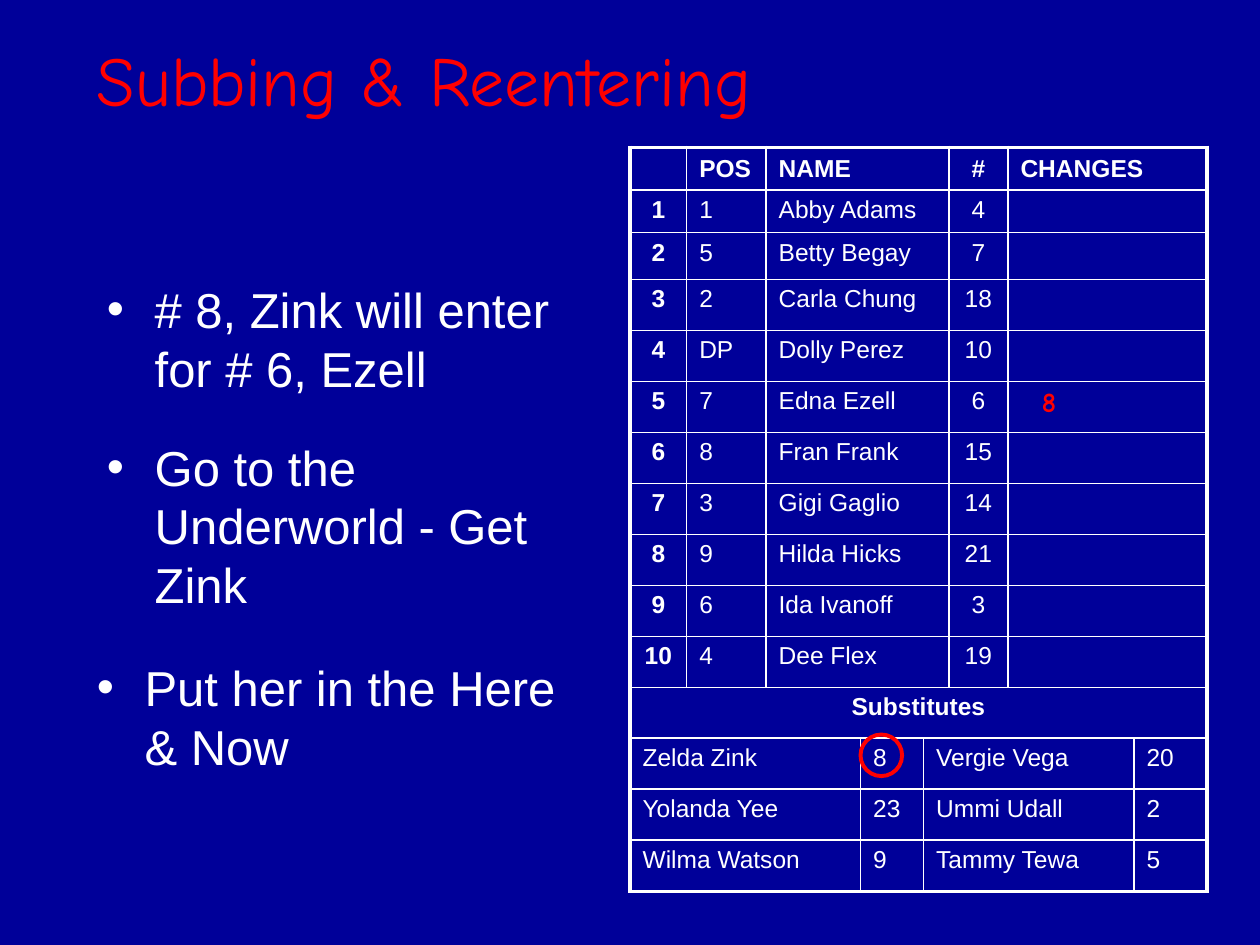
from lxml.etree import SubElement
from pptx import Presentation
from pptx.dml.color import RGBColor
from pptx.enum.shapes import MSO_SHAPE as Shape
from pptx.enum.text import MSO_ANCHOR as Anchor, PP_ALIGN as Align
from pptx.oxml.ns import qn
from pptx.util import Inches, Pt

COLORS = {"background": "000099", "text": "FFFFFF", "accent": "FF0000"}
BODY_FONT, TITLE_FONT = "Arial", "Comic Neue"
TABLE_TEXT_SIZE = 14
INNER_LINE, OUTER_LINE = 1, 2.25

COLUMN_WIDTHS = [0.45, 0.63, 0.75, 0.5, 0.2, 0.47, 1, 0.58]
TABLE_HEIGHT = 5.89
TOP_ROW_HEIGHTS = [0.32, 0.34, 0.37]
# First column and number of columns of each cell
LINEUP_SPANS = [(0, 1), (1, 1), (2, 3), (5, 1), (6, 2)]
SUBSTITUTE_SPANS = [(0, 3), (3, 1), (4, 3), (7, 1)]

HEADER = ["", "POS", "NAME", "#", "CHANGES"]
LINEUP = [
    ("1", "Abby Adams", "4"),
    ("5", "Betty Begay", "7"),
    ("2", "Carla Chung", "18"),
    ("DP", "Dolly Perez", "10"),
    ("7", "Edna Ezell", "6"),
    ("8", "Fran Frank", "15"),
    ("3", "Gigi Gaglio", "14"),
    ("9", "Hilda Hicks", "21"),
    ("6", "Ida Ivanoff", "3"),
    ("4", "Dee Flex", "19"),
]
SUBSTITUTES = [
    ("Zelda Zink", "8", "Vergie Vega", "20"),
    ("Yolanda Yee", "23", "Ummi Udall", "2"),
    ("Wilma Watson", "9", "Tammy Tewa", "5"),
]
STEPS = [
    ("# 8, Zink will enter for # 6, Ezell", (0.75, 2.17, 4.17, 1.5)),
    ("Put her in the Here & Now", (0.67, 5.17, 4.17, 1.08)),
    ("Go to the Underworld - Get Zink", (0.75, 3.42, 4.17, 1.5)),
]


def color(name):
    return RGBColor.from_string(COLORS[name])


def write(paragraph, text, color_name="text", **font_values):
    run = paragraph.add_run()
    run.text = text
    for name, value in font_values.items():
        setattr(run.font, name, value)
    run.font.color.rgb = color(color_name)


def add_text(slide, text, box, anchor=Anchor.TOP, **style):
    shape = slide.shapes.add_textbox(*map(Inches, box))
    frame = shape.text_frame
    frame.word_wrap = True
    frame.vertical_anchor = anchor
    paragraph = frame.paragraphs[0]
    write(paragraph, text, **style)
    return paragraph


def add_step(slide, text, box):
    paragraph = add_text(slide, text, box, name=BODY_FONT, size=Pt(28))
    properties = paragraph._p.get_or_add_pPr()
    properties.set("marL", str(Inches(0.38)))
    properties.set("indent", str(-Inches(0.38)))
    SubElement(properties, qn("a:buFont"), typeface=BODY_FONT)
    SubElement(properties, qn("a:buChar"), char="•")


def fill_row(table, row, texts, spans, bold=(), centered=(), anchor=Anchor.TOP):
    """Merge the cells of one row by spans and write the texts in them."""
    for index, (text, (column, width)) in enumerate(zip(texts, spans)):
        cell = table.cell(row, column)
        if width > 1:
            cell.merge(table.cell(row, column + width - 1))
        cell.vertical_anchor = anchor
        paragraph = cell.text_frame.paragraphs[0]
        paragraph.alignment = Align.CENTER if index in centered else Align.LEFT
        if text:
            write(paragraph, text, name=BODY_FONT, size=Pt(TABLE_TEXT_SIZE),
                  bold=index in bold)


def size_empty_cells(table):
    """Keep empty cells from stretching their rows."""
    for cell in table.iter_cells():
        paragraph = cell.text_frame.paragraphs[0]
        if not paragraph.runs:
            SubElement(paragraph._p, qn("a:endParaRPr"), sz=str(TABLE_TEXT_SIZE * 100))


def add_border(cell, side, width):
    line = SubElement(cell._tc.get_or_add_tcPr(), qn(f"a:{side}"), w=str(Pt(width)))
    fill = SubElement(line, qn("a:solidFill"))
    SubElement(fill, qn("a:srgbClr"), val=COLORS["text"])


def draw_borders(table):
    """Rule the grid around merged cells, with a heavier outer frame."""
    last_row, last_column = len(table.rows) - 1, len(table.columns) - 1
    for row in range(last_row + 1):
        for column in range(last_column + 1):
            cell = table.cell(row, column)
            at_right = column == last_column
            edges = [
                ("lnL", not cell.is_spanned, column == 0),
                ("lnR", at_right or not table.cell(row, column + 1).is_spanned
                 or cell.is_merge_origin, at_right or
                 cell.is_merge_origin and column + cell.span_width > last_column),
                ("lnT", True, row == 0),
                ("lnB", True, row == last_row),
            ]
            for side, visible, outer in edges:
                if visible:
                    add_border(cell, side, OUTER_LINE if outer else INNER_LINE)
            cell.fill.background()


def add_lineup_card(slide):
    row_count = len(LINEUP) + len(SUBSTITUTES) + 2
    table = slide.shapes.add_table(
        row_count, len(COLUMN_WIDTHS), Inches(5), Inches(1.17),
        Inches(sum(COLUMN_WIDTHS)), Inches(TABLE_HEIGHT)).table
    table.first_row = table.horz_banding = False
    for column, width in zip(table.columns, COLUMN_WIDTHS):
        column.width = Inches(width)
    equal_count = row_count - len(TOP_ROW_HEIGHTS)
    equal_height = (TABLE_HEIGHT - sum(TOP_ROW_HEIGHTS)) / equal_count
    heights = TOP_ROW_HEIGHTS + [equal_height] * equal_count
    for row, height in zip(table.rows, heights):
        row.height = Inches(height)

    fill_row(table, 0, HEADER, LINEUP_SPANS, bold=range(5), centered=[3],
             anchor=Anchor.MIDDLE)
    for order, player in enumerate(LINEUP, start=1):
        fill_row(table, order, [str(order), *player, ""], LINEUP_SPANS,
                 bold=[0], centered=[0, 3])
    heading_row = len(LINEUP) + 1
    fill_row(table, heading_row, ["Substitutes"], [(0, len(COLUMN_WIDTHS))],
             bold=[0], centered=[0])
    for row, players in enumerate(SUBSTITUTES, start=heading_row + 1):
        fill_row(table, row, players, SUBSTITUTE_SPANS)
    size_empty_cells(table)
    draw_borders(table)


def add_ring(slide, box):
    ring = slide.shapes.add_shape(Shape.OVAL, *map(Inches, box))
    ring.shadow.inherit = False
    ring.fill.background()
    ring.line.color.rgb = color("accent")
    ring.line.width = Pt(2.25)


def main():
    presentation = Presentation()
    presentation.slide_width, presentation.slide_height = Inches(10), Inches(7.5)
    slide = presentation.slides.add_slide(presentation.slide_layouts[6])
    background = slide.background.fill
    background.solid()
    background.fore_color.rgb = color("background")

    add_lineup_card(slide)
    add_text(slide, "Subbing & Reentering", (0.67, 0.25, 8.5, 0.75), Anchor.MIDDLE,
             color_name="accent", name=TITLE_FONT, size=Pt(40))
    for text, box in STEPS:
        add_step(slide, text, box)
    add_ring(slide, (6.83, 5.83, 0.33, 0.33))
    add_text(slide, "8", (8.17, 3, 0.42, 0.41), color_name="accent",
             name=TITLE_FONT, size=Pt(16), bold=True)
    presentation.save("out.pptx")


if __name__ == "__main__":
    main()
